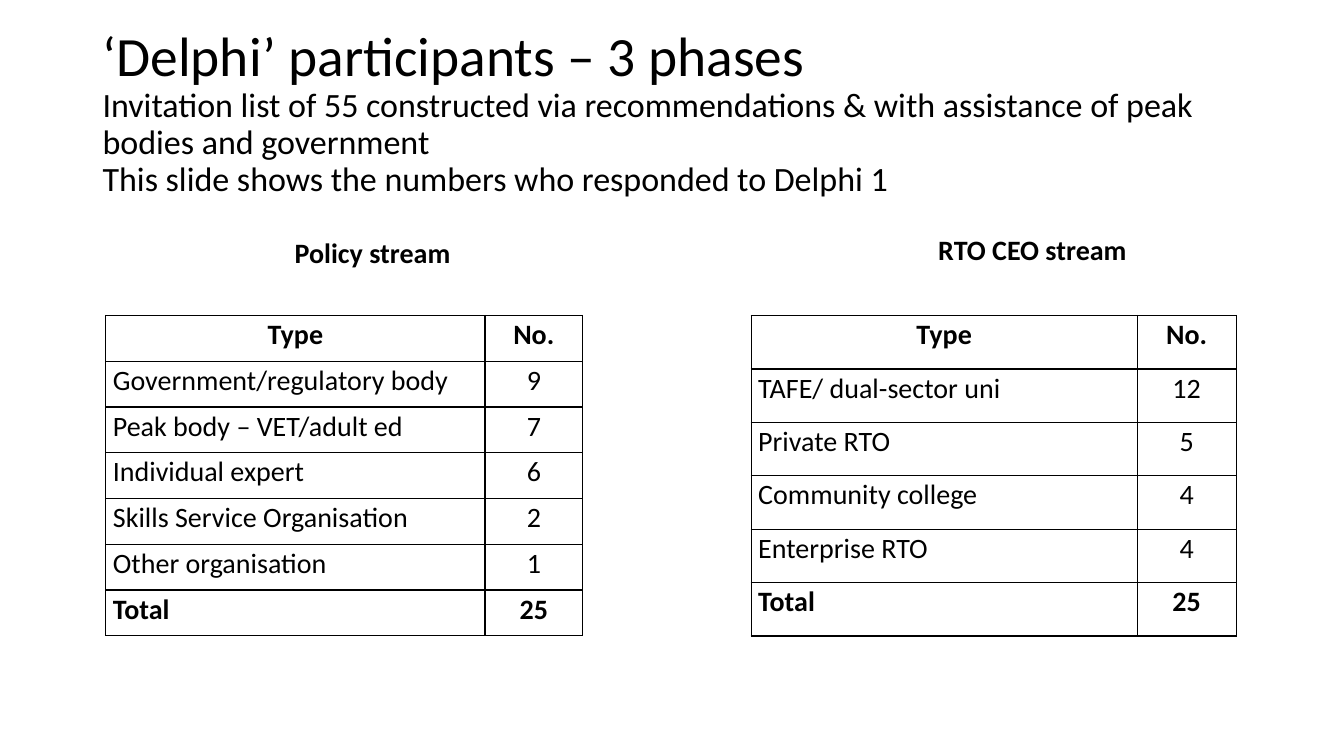
from dataclasses import dataclass

from lxml import etree
from pptx import Presentation
from pptx.dml.color import RGBColor
from pptx.enum.text import MSO_ANCHOR, PP_ALIGN
from pptx.oxml.ns import qn
from pptx.util import Inches, Pt

CENTER = PP_ALIGN.CENTER
LEFT = PP_ALIGN.LEFT
MIDDLE = MSO_ANCHOR.MIDDLE


@dataclass(frozen=True)
class Theme:
    font: str = "Calibri"
    ink: str = "000000"
    title_size: float = 39.6
    subtitle_size: float = 24.3
    body_size: float = 20
    border_width: float = 1


class StreamSlide:
    def __init__(self, slide, theme):
        self.slide = slide
        self.theme = theme

    def style(self, paragraph, size, bold=False, align=LEFT):
        paragraph.alignment = align
        paragraph.font.name = self.theme.font
        paragraph.font.size = Pt(size)
        paragraph.font.bold = bold
        paragraph.font.color.rgb = RGBColor.from_string(self.theme.ink)

    def text_frame(self, left, top, width, height):
        box = self.slide.shapes.add_textbox(
            Inches(left), Inches(top), Inches(width), Inches(height))
        frame = box.text_frame
        frame.word_wrap = True
        frame.vertical_anchor = MIDDLE
        return frame

    def title(self, heading, details, left, top, width, height):
        paragraph = self.text_frame(left, top, width, height).paragraphs[0]
        self.style(paragraph, self.theme.subtitle_size)
        paragraph.line_spacing = 0.9
        heading_run = paragraph.add_run()
        heading_run.text = heading
        heading_run.font.size = Pt(self.theme.title_size)
        for detail in details:
            paragraph.add_line_break()
            detail_run = paragraph.add_run()
            detail_run.text = detail
            detail_run.font.size = Pt(self.theme.subtitle_size)

    def label(self, wording, left, top, width, height):
        paragraph = self.text_frame(left, top, width, height).paragraphs[0]
        paragraph.text = wording
        self.style(paragraph, self.theme.body_size, True, CENTER)

    def border(self, cell):
        properties = cell._tc.get_or_add_tcPr()
        for position, side in enumerate(("a:lnL", "a:lnR", "a:lnT", "a:lnB")):
            line = etree.Element(qn(side), w=str(Pt(self.theme.border_width)))
            fill = etree.SubElement(line, qn("a:solidFill"))
            etree.SubElement(fill, qn("a:srgbClr"), val=self.theme.ink)
            properties.insert(position, line)

    def table(self, counts, left, top, column_widths, height):
        rows = [("Type", "No."), *counts]
        grid = self.slide.shapes.add_table(
            len(rows), len(column_widths), Inches(left), Inches(top),
            Inches(sum(column_widths)), Inches(height)).table
        grid.first_row = False
        grid.horz_banding = False
        for column, width in zip(grid.columns, column_widths):
            column.width = Inches(width)
        for row_index, row in enumerate(rows):
            emphasised = row_index in (0, len(rows) - 1)
            for column_index, wording in enumerate(row):
                cell = grid.cell(row_index, column_index)
                cell.margin_left = cell.margin_right = Inches(0.07)
                cell.margin_top = cell.margin_bottom = 0
                cell.fill.background()
                self.border(cell)
                paragraph = cell.text_frame.paragraphs[0]
                paragraph.text = wording
                paragraph.line_spacing = 1.07
                centred = row_index == 0 or column_index == 1
                self.style(paragraph, self.theme.body_size, emphasised,
                           CENTER if centred else LEFT)


def main():
    presentation = Presentation()
    presentation.slide_width = Inches(13.33)
    presentation.slide_height = Inches(7.5)
    page = StreamSlide(
        presentation.slides.add_slide(presentation.slide_layouts[6]), Theme())

    page.title(
        "‘Delphi’ participants – 3 phases",
        ["Invitation list of 55 constructed via recommendations & with "
         "assistance of peak bodies and government",
         "This slide shows the numbers who responded to Delphi 1"],
        0.92, 0.4, 11.5, 1.45)

    ceo_counts = [
        ("TAFE/ dual-sector uni", "12"),
        ("Private RTO", "5"),
        ("Community college", "4"),
        ("Enterprise RTO", "4"),
        ("Total", "25"),
    ]
    policy_counts = [
        ("Government/regulatory body", "9"),
        ("Peak body – VET/adult ed", "7"),
        ("Individual expert", "6"),
        ("Skills Service Organisation", "2"),
        ("Other organisation", "1"),
        ("Total", "25"),
    ]
    table_top, table_height = 3.13, 3.18
    page.table(ceo_counts, 7.45, table_top, (3.83, 0.98), table_height)
    page.label("RTO CEO stream", 8.93, 2.25, 2.62, 0.44)
    page.table(policy_counts, 1.05, table_top, (3.76, 0.97), table_height)
    page.label("Policy stream", 2.37, 2.28, 2.65, 0.44)

    presentation.save("out.pptx")


if __name__ == "__main__":
    main()
